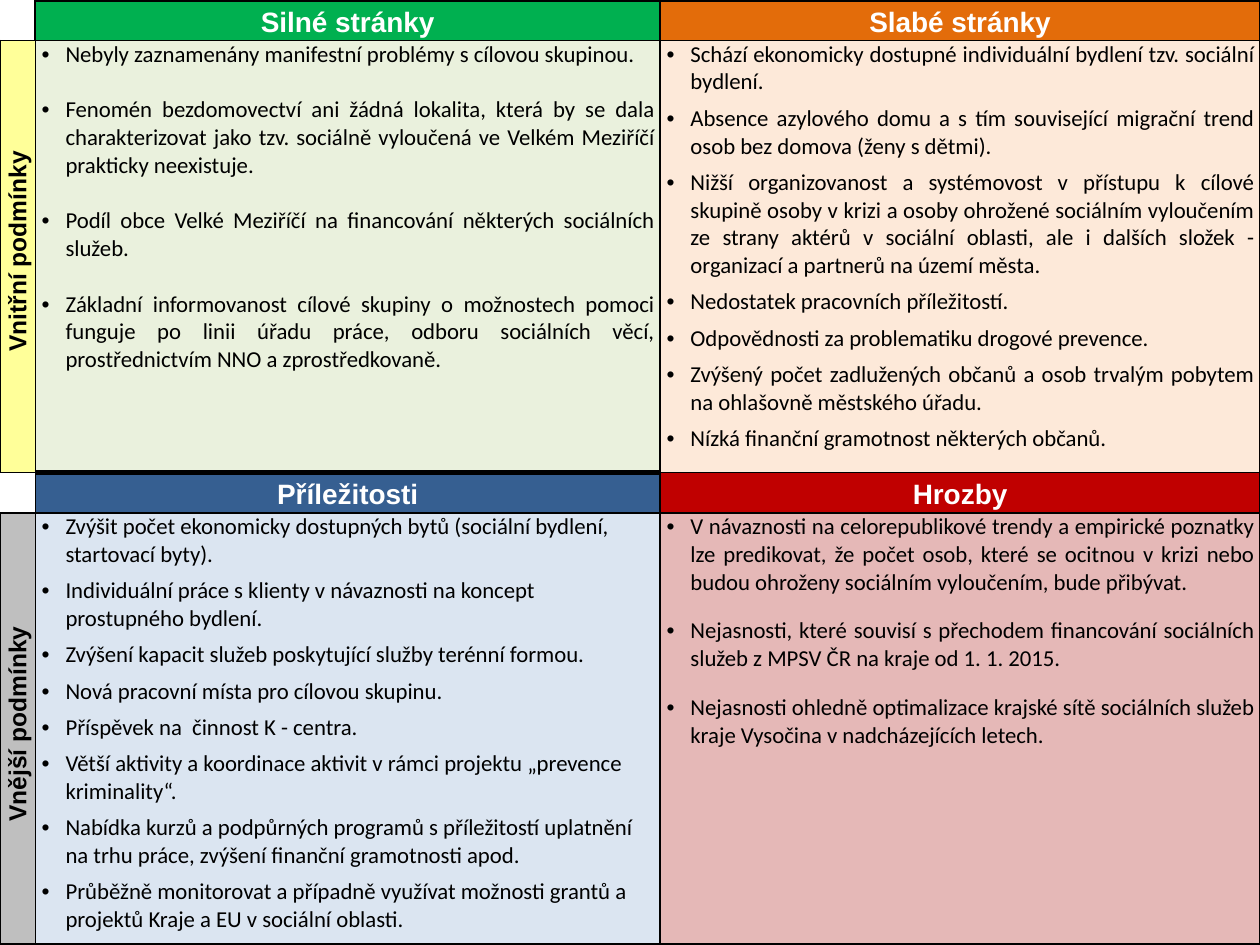
from lxml.etree import SubElement as Sub
from pptx import Presentation
from pptx.dml.color import RGBColor as RGB
from pptx.enum.text import MSO_ANCHOR as Anchor, PP_ALIGN as Align
from pptx.oxml.ns import qn
from pptx.util import Emu, Inches, Pt

COLORS = {
    "black": "000000", "white": "FFFFFF",
    "green": "00B050", "mint": "EAF1DD",
    "orange": "E36C0A", "peach": "FDE9D9",
    "blue": "365F91", "sky": "DBE5F1",
    "red": "C00000", "rose": "E5B8B7",
    "yellow": "FFFF99", "gray": "BFBFBF",
}
WIDE, HIGH = Inches(10), Inches(7.5)
COLS = [0.028, 0.496, 0.476]
ROWS = [0.043, 0.457, 0.043, 0.457]
LINE = 15.9  # points of one blank line of body text
GAP = 4.9    # points of one small blank line
INDENT = Inches(0.19)

SIDES = [("Vnitřní podmínky", "yellow"), ("Vnější podmínky", "gray")]

# (row, column, title, title fill, body fill, alignment, gap, first gap, items)
PARTS = [
    (0, 1, "Silné stránky", "green", "mint", Align.JUSTIFY, LINE, 0, [
        "Nebyly zaznamenány manifestní problémy s cílovou skupinou.",
        "Fenomén bezdomovectví ani žádná lokalita, která by se dala charakterizovat "
        "jako tzv. sociálně vyloučená ve Velkém Meziříčí prakticky neexistuje.",
        "Podíl obce Velké Meziříčí na financování některých sociálních služeb.",
        "Základní informovanost cílové skupiny o možnostech pomoci funguje po linii "
        "úřadu práce, odboru sociálních věcí, prostřednictvím NNO a zprostředkovaně.",
    ]),
    (0, 2, "Slabé stránky", "orange", "peach", Align.JUSTIFY, GAP, 0, [
        "Schází ekonomicky dostupné individuální bydlení tzv. sociální bydlení.",
        "Absence azylového domu a s tím související migrační trend osob bez domova "
        "(ženy s dětmi).",
        "Nižší organizovanost a systémovost v přístupu k cílové skupině osoby v krizi "
        "a osoby ohrožené sociálním vyloučením ze strany aktérů v sociální oblasti, "
        "ale i dalších složek - organizací a partnerů na území města.",
        "Nedostatek pracovních příležitostí.",
        "Odpovědnosti za problematiku drogové prevence.",
        "Zvýšený počet zadlužených občanů a osob trvalým pobytem na ohlašovně "
        "městského úřadu.",
        "Nízká finanční gramotnost některých občanů.",
    ]),
    (2, 1, "Příležitosti", "blue", "sky", Align.LEFT, GAP, 0, [
        "Zvýšit počet ekonomicky dostupných bytů (sociální bydlení, startovací byty).",
        "Individuální práce s klienty v návaznosti na koncept prostupného bydlení.",
        "Zvýšení kapacit služeb poskytující služby terénní formou.",
        "Nová pracovní místa pro cílovou skupinu.",
        "Příspěvek na  činnost K - centra.",
        "Větší aktivity a koordinace aktivit v rámci projektu „prevence kriminality“.",
        "Nabídka kurzů a podpůrných programů s příležitostí uplatnění na trhu práce, "
        "zvýšení finanční gramotnosti apod.",
        "Průběžně monitorovat a případně využívat možnosti grantů a projektů Kraje "
        "a EU v sociální oblasti.",
    ]),
    (2, 2, "Hrozby", "red", "rose", Align.JUSTIFY, 12, 12, [
        "V návaznosti na celorepublikové trendy a empirické poznatky lze predikovat, "
        "že počet osob, které se ocitnou v krizi nebo budou ohroženy sociálním "
        "vyloučením, bude přibývat.",
        "Nejasnosti, které souvisí s přechodem financování sociálních služeb "
        "z MPSV ČR na kraje od 1. 1. 2015.",
        "Nejasnosti ohledně optimalizace krajské sítě sociálních služeb kraje "
        "Vysočina v nadcházejících letech.",
    ]),
]


def write(par, text, size=13, font="Calibri", color="black", bold=False,
          align=Align.LEFT, before=0, lines=1.0, bullet=False):
    par.alignment = align
    par.space_before = Pt(before)
    par.line_spacing = lines
    if bullet:
        props = par._p.get_or_add_pPr()
        props.set("marL", str(INDENT))
        props.set("indent", str(-INDENT))
        Sub(props, qn("a:buFont"), typeface="Arial")
        Sub(props, qn("a:buChar"), char="•")
    run = par.add_run()
    run.text = text
    run.font.size, run.font.name, run.font.bold = Pt(size), font, bold
    run.font.color.rgb = RGB.from_string(COLORS[color])


def paint(cell, fill):
    cell.fill.solid()
    cell.fill.fore_color.rgb = RGB.from_string(COLORS[fill])


def edge(cell, widths):
    """Draw left, right, top and bottom borders; a width of 0 hides one."""
    props = cell._tc.get_or_add_tcPr()
    for spot, (side, width) in enumerate(zip("LRTB", widths)):
        line = Sub(props, qn("a:ln" + side), w=str(Pt(width)))
        if width:
            solid = Sub(line, qn("a:solidFill"))
            Sub(solid, qn("a:srgbClr"), val=COLORS["black"])
        else:
            Sub(line, qn("a:noFill"))
        props.insert(spot, line)


def rule(row, col):
    """Give the border widths of a cell by its place in the grid."""
    last = len(ROWS) - 1
    corner = col == 0 and row % 2 == 0
    left = 0 if corner else 1.5 if (row, col) == (0, 1) else 1
    right = 1.5 if (row, col) == (0, 0) else 1
    top = 0 if (row, col) == (0, 0) else 3 if row == 0 or (row, col) == (2, 1) else 1
    base = 3 if row == last or (row, col) == (1, 1) else 1
    return left, right, top, base


def add_grid(slide, left, top, width, height):
    frame = slide.shapes.add_table(len(ROWS), len(COLS), left, top, width, height)
    grid = frame.table
    grid.first_row = grid.horz_banding = False
    for col, share in zip(grid.columns, COLS):
        col.width = Emu(int(width * share))
    for row, share in zip(grid.rows, ROWS):
        row.height = Emu(int(height * share))
    for r in range(len(ROWS)):
        for c in range(len(COLS)):
            cell = grid.cell(r, c)
            cell.margin_left = cell.margin_right = Inches(0.05)
            cell.margin_top = cell.margin_bottom = 0
            cell.fill.background()
            edge(cell, rule(r, c))
    return grid


def add_head(cell, text, fill, size=16, color="white"):
    paint(cell, fill)
    cell.vertical_anchor = Anchor.MIDDLE
    write(cell.text_frame.paragraphs[0], text, size=size, font="Arial",
          color=color, bold=True, align=Align.CENTER, lines=1.15)


def add_side(cell, text, fill):
    add_head(cell, text, fill, size=14, color="black")
    cell._tc.get_or_add_tcPr().set("vert", "vert270")
    par = cell.text_frame.paragraphs[0]
    par._p.get_or_add_pPr().set("marL", str(Inches(0.08)))


def add_list(cell, items, fill, align, gap, first):
    paint(cell, fill)
    frame = cell.text_frame
    for i, item in enumerate(items):
        par = frame.add_paragraph() if i else frame.paragraphs[0]
        write(par, item, align=align, before=gap if i else first, bullet=True)


def main():
    deck = Presentation()
    deck.slide_width, deck.slide_height = WIDE, HIGH
    slide = deck.slides.add_slide(deck.slide_layouts[6])
    grid = add_grid(slide, 0, 0, WIDE, HIGH)
    for i, (text, fill) in enumerate(SIDES):
        add_side(grid.cell(2 * i + 1, 0), text, fill)
    for row, col, title, dark, light, align, gap, first, items in PARTS:
        add_head(grid.cell(row, col), title, dark)
        add_list(grid.cell(row + 1, col), items, light, align, gap, first)
    deck.save("out.pptx")


if __name__ == "__main__":
    main()
